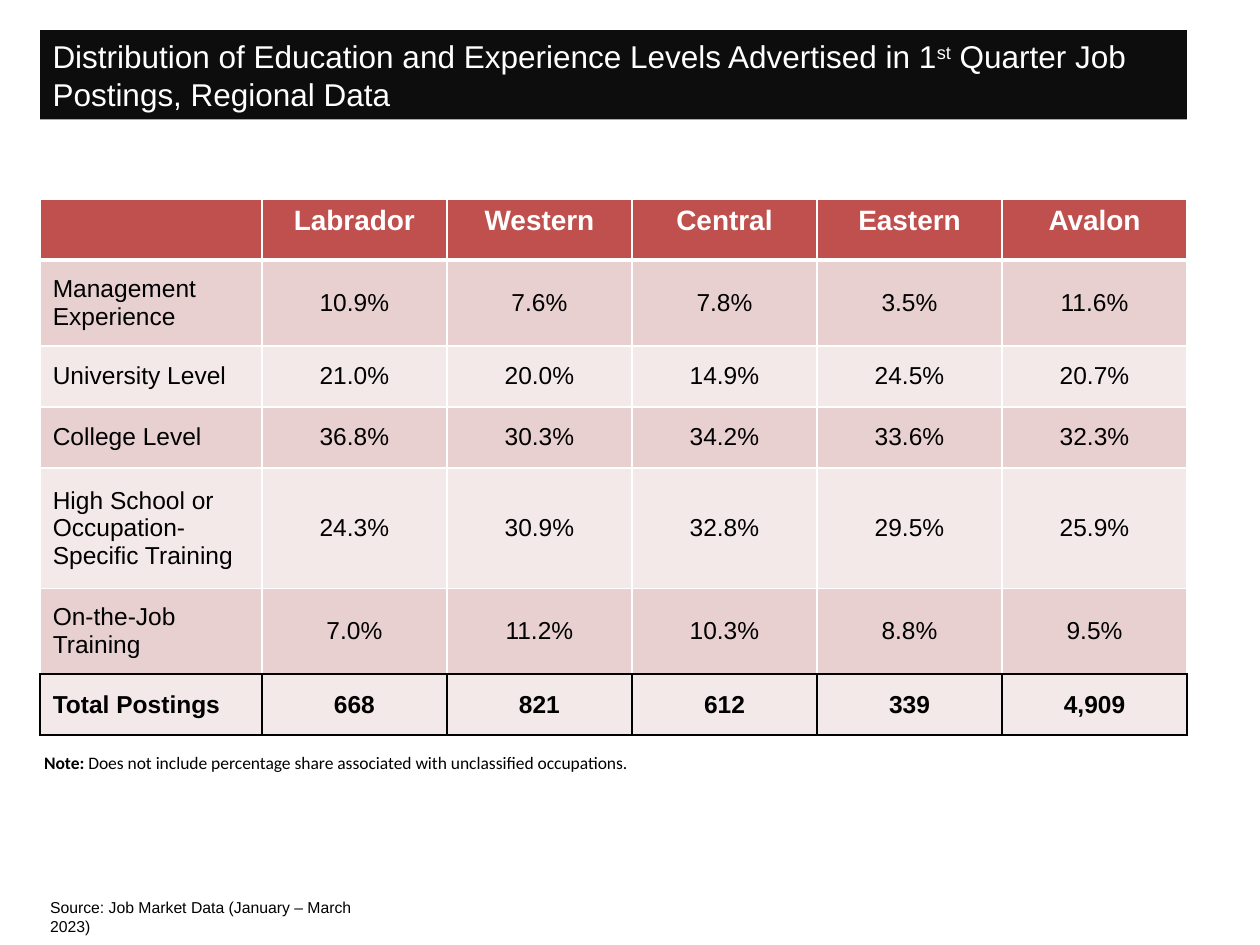
from typing import NamedTuple

from lxml import etree
from pptx import Presentation
from pptx import util as u
from pptx.dml.color import RGBColor
from pptx.enum import shapes, text
from pptx.oxml.ns import qn

COLOURS = {
    "white": "FFFFFF",
    "black": "000000",
    "banner": "0D0D0D",
    "header": "C0504D",
    "band_dark": "E8D0D0",
    "band_light": "F4E9E9",
}
LEFT, WIDTH = u.Cm(0.81), u.Cm(23.12)
LABEL_WIDTH, REGION_WIDTH = u.Cm(4.47), u.Cm(3.73)
LINE_HEIGHTS = {1: u.Cm(1.23), 2: u.Cm(1.73), 3: u.Cm(2.43)}


class Style(NamedTuple):
    size: float
    colour: str = "black"
    bold: bool = False
    font: str = "Arial"
    baseline: int = 0


class Level(NamedTuple):
    label: str
    values: tuple[str, ...]
    lines: int = 1


REGIONS = Level("", ("Labrador", "Western", "Central", "Eastern", "Avalon"))
LEVELS = [
    Level("Management Experience", ("10.9%", "7.6%", "7.8%", "3.5%", "11.6%"), 2),
    Level("University Level", ("21.0%", "20.0%", "14.9%", "24.5%", "20.7%")),
    Level("College Level", ("36.8%", "30.3%", "34.2%", "33.6%", "32.3%")),
    Level("High School or Occupation-Specific Training",
          ("24.3%", "30.9%", "32.8%", "29.5%", "25.9%"), 3),
    Level("On-the-Job Training", ("7.0%", "11.2%", "10.3%", "8.8%", "9.5%"), 2),
]
TOTALS = Level("Total Postings", ("668", "821", "612", "339", "4,909"))


def rgb(colour: str) -> RGBColor:
    return RGBColor.from_string(COLOURS[colour])


def add_run(paragraph, wording: str, style: Style) -> None:
    run = paragraph.add_run()
    run.text = wording
    run.font.size = u.Pt(style.size)
    run.font.name = style.font
    run.font.bold = style.bold
    run.font.color.rgb = rgb(style.colour)
    if style.baseline:
        run._r.get_or_add_rPr().set("baseline", str(style.baseline * 1000))


def add_banner(slide) -> None:
    banner = slide.shapes.add_shape(
        shapes.MSO_SHAPE.RECTANGLE, LEFT, u.Cm(0.61), WIDTH, u.Cm(1.8))
    banner.shadow.inherit = False
    banner.fill.solid()
    banner.fill.fore_color.rgb = rgb("banner")
    banner.line.fill.background()
    frame = banner.text_frame
    frame.word_wrap = True
    frame.auto_size = text.MSO_AUTO_SIZE.SHAPE_TO_FIT_TEXT
    title = frame.paragraphs[0]
    title.alignment = text.PP_ALIGN.LEFT
    style = Style(18, "white")
    add_run(title, "Distribution of Education and Experience Levels Advertised in 1", style)
    add_run(title, "st", style._replace(baseline=30))
    add_run(title, " Quarter Job Postings, Regional Data", style)


def add_caption(slide, left: float, top: float, width: float, height: float,
                runs: list[tuple[str, Style]], wrap: bool) -> None:
    """Add a one-paragraph text box; lengths are in centimetres."""
    frame = slide.shapes.add_textbox(
        u.Cm(left), u.Cm(top), u.Cm(width), u.Cm(height)).text_frame
    frame.word_wrap = wrap
    frame.auto_size = text.MSO_AUTO_SIZE.SHAPE_TO_FIT_TEXT
    for wording, style in runs:
        add_run(frame.paragraphs[0], wording, style)


def set_borders(cell, colour: str, bottom: tuple[str, float]) -> None:
    """Draw 1 pt borders in one colour, with a colour and width of its own below."""
    properties = cell._tc.get_or_add_tcPr()
    side = (colour, 1)
    for tag, (name, points) in zip(("lnL", "lnR", "lnT", "lnB"), (side, side, side, bottom)):
        line = etree.SubElement(properties, qn(f"a:{tag}"), w=str(u.Pt(points)))
        fill = etree.SubElement(line, qn("a:solidFill"))
        etree.SubElement(fill, qn("a:srgbClr"), val=COLOURS[name])


def fill_row(table, index: int, level: Level, style: Style, fill: str,
             border: str, bottom: tuple[str, float], anchor) -> None:
    table.rows[index].height = LINE_HEIGHTS[level.lines]
    for column, wording in enumerate((level.label, *level.values)):
        cell = table.cell(index, column)
        set_borders(cell, border, bottom)
        cell.fill.solid()
        cell.fill.fore_color.rgb = rgb(fill)
        cell.vertical_anchor = anchor
        paragraph = cell.text_frame.paragraphs[0]
        if column:
            paragraph.alignment = text.PP_ALIGN.CENTER
        if wording:
            add_run(paragraph, wording, style)


def add_levels_table(slide) -> None:
    rows = [REGIONS, *LEVELS, TOTALS]
    height = sum(LINE_HEIGHTS[row.lines] for row in rows)
    table = slide.shapes.add_table(
        len(rows), len(REGIONS.values) + 1, LEFT, u.Cm(4.01), WIDTH, height).table
    for index, column in enumerate(table.columns):
        column.width = REGION_WIDTH if index else LABEL_WIDTH

    top, middle = text.MSO_ANCHOR.TOP, text.MSO_ANCHOR.MIDDLE
    fill_row(table, 0, REGIONS, Style(16, "white", True), "header",
             "white", ("white", 3), top)
    for index, level in enumerate(LEVELS, start=1):
        band = "band_dark" if index % 2 else "band_light"
        below = "black" if index == len(LEVELS) else "white"
        fill_row(table, index, level, Style(14), band, "white", (below, 1), middle)
    fill_row(table, len(rows) - 1, TOTALS, Style(14, bold=True), "band_light",
             "black", ("black", 1), middle)


def main() -> None:
    deck = Presentation()
    deck.slide_width, deck.slide_height = u.Cm(25.4), u.Cm(19.05)
    slide = deck.slides.add_slide(deck.slide_layouts[6])
    add_banner(slide)
    add_caption(slide, 0.76, 17.98, 7.24, 0.64,
                [("Source: Job Market Data (January – March 2023)", Style(9))], wrap=False)
    note = Style(10, font="Calibri")
    add_caption(slide, 0.64, 15.04, 13.77, 0.69, [
        ("Note: ", note._replace(bold=True)),
        ("Does not include percentage share associated with unclassified occupations.", note),
    ], wrap=True)
    add_levels_table(slide)
    deck.save("out.pptx")


if __name__ == "__main__":
    main()
